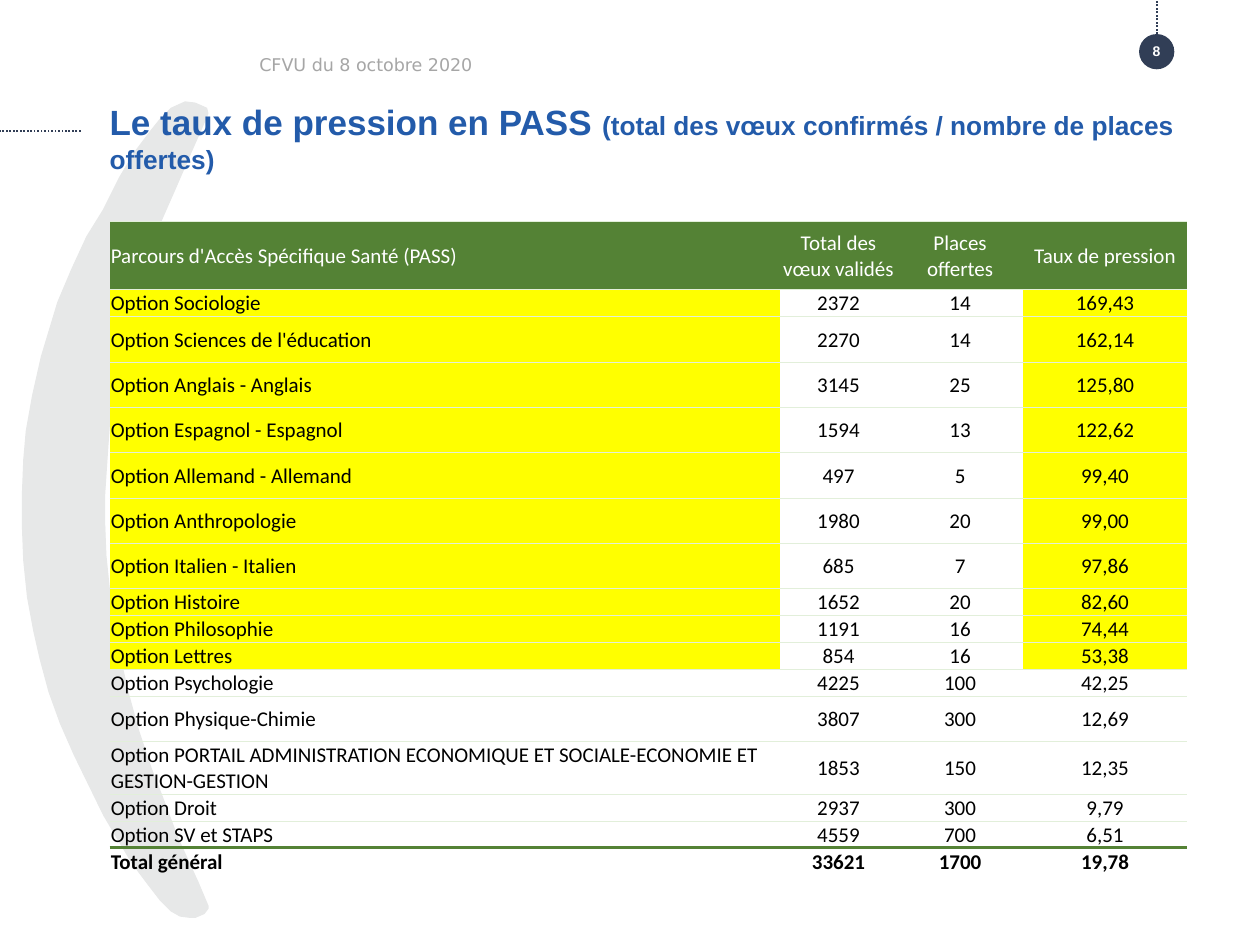
from dataclasses import dataclass
from pptx import Presentation
from pptx.dml.color import RGBColor
from pptx.enum.dml import MSO_LINE
from pptx.enum.shapes import MSO_CONNECTOR, MSO_SHAPE
from pptx.enum.text import MSO_ANCHOR, MSO_AUTO_SIZE, PP_ALIGN
from pptx.oxml import parse_xml
from pptx.oxml.ns import nsdecls
from pptx.util import Pt

DOT = MSO_LINE.ROUND_DOT
LINE = MSO_CONNECTOR.STRAIGHT
OVAL = MSO_SHAPE.OVAL
TOP, MID = MSO_ANCHOR.TOP, MSO_ANCHOR.MIDDLE
FIXED = MSO_AUTO_SIZE.NONE
LEFT, MIDDLE = PP_ALIGN.LEFT, PP_ALIGN.CENTER
PX = 9144
PLAIN = "{2D5ABB26-0587-4C30-8999-92F81FD0307C}"


@dataclass(frozen=True)
class Theme:
    """Colours, fonts and type sizes of the slide."""
    navy: str = "313E56"
    blue: str = "235BAA"
    green: str = "548235"
    pale: str = "E2EFDA"
    yellow: str = "FFFF00"
    white: str = "FFFFFF"
    black: str = "000000"
    grey: str = "A6A6A6"
    moon: str = "E7E8E8"
    sans: str = "Arial"
    body: str = "Calibri"
    note: str = "DejaVu Sans"
    head: int = 20
    sub: int = 15
    cell: int = 12
    foot: int = 10
    page: int = 8


THEME = Theme()

UPPER = [
    (147, 9), (146, 5), (137, 1), (129, 0), (118, 5), (109, 14), (101, 24),
    (89, 40), (77, 60), (64, 86), (51, 107), (39, 133), (28, 159), (15, 202),
    (8, 233), (3, 261), (1, 284), (0, 309), (0, 339), (1, 364), (4, 393),
    (9, 420), (14, 442), (21, 468), (30, 493), (41, 518), (60, 557),
    (65, 567), (65, 312), (67, 282), (69, 253), (75, 219), (80, 192),
    (93, 144), (101, 116), (110, 94), (121, 69), (134, 39), (142, 21),
]
LOWER = [
    (147, 638), (139, 619), (123, 584), (111, 552), (102, 529), (92, 499),
    (84, 470), (78, 444), (72, 411), (69, 389), (66, 360), (65, 336),
    (65, 567), (75, 584), (87, 604), (99, 620), (109, 633), (118, 642),
    (125, 646), (133, 647), (137, 647), (144, 644), (147, 640),
]

HEADS = ["Parcours d'Accès Spécifique Santé (PASS)", "Total des vœux validés",
         "Places offertes", "Taux de pression"]
ROWS = [
    ("Option Sociologie", "2372", "14", "169,43"),
    ("Option Sciences de l'éducation", "2270", "14", "162,14"),
    ("Option Anglais - Anglais", "3145", "25", "125,80"),
    ("Option Espagnol - Espagnol", "1594", "13", "122,62"),
    ("Option Allemand - Allemand", "497", "5", "99,40"),
    ("Option Anthropologie", "1980", "20", "99,00"),
    ("Option Italien - Italien", "685", "7", "97,86"),
    ("Option Histoire", "1652", "20", "82,60"),
    ("Option Philosophie", "1191", "16", "74,44"),
    ("Option Lettres", "854", "16", "53,38"),
    ("Option Psychologie", "4225", "100", "42,25"),
    ("Option Physique-Chimie", "3807", "300", "12,69"),
    ("Option PORTAIL ADMINISTRATION ECONOMIQUE ET SOCIALE-ECONOMIE ET "
     "GESTION-GESTION", "1853", "150", "12,35"),
    ("Option Droit", "2937", "300", "9,79"),
    ("Option SV et STAPS", "4559", "700", "6,51"),
    ("Total général", "33621", "1700", "19,78"),
]
TALL = {2, 3, 4, 5, 6, 7, 12, 13}
HOT = 10
COLS = [532, 93, 100, 130]


def emu(*sizes):
    """Turn px lengths into EMU."""
    return [size * PX for size in sizes]


def style(run, face, size, tint, bold=False):
    """Format one run."""
    font = run.font
    font.name, font.size, font.bold = face, Pt(size), bold
    font.color.rgb = RGBColor.from_string(tint)


def paint(shape, tint, edge=None):
    """Fill a shape and draw or drop its outline."""
    shape.shadow.inherit = False
    shape.fill.solid()
    shape.fill.fore_color.rgb = RGBColor.from_string(tint)
    if edge:
        shape.line.color.rgb = RGBColor.from_string(tint)
        shape.line.width = Pt(edge)
    else:
        shape.line.fill.background()


def label(slide, box, text, align, *look):
    """Place a line of text in a box."""
    frame = slide.shapes.add_textbox(*emu(*box)).text_frame
    frame.word_wrap, frame.vertical_anchor = True, MID
    frame.text = text
    frame.paragraphs[0].alignment = align
    style(frame.paragraphs[0].runs[0], *look)


def dotted(slide, *ends):
    """Draw a dotted rule between two points."""
    rule = slide.shapes.add_connector(LINE, *emu(*ends))
    rule.line.color.rgb = RGBColor.from_string(THEME.navy)
    rule.line.width, rule.line.dash_style = Pt(1), DOT
    rule._element.spPr.append(parse_xml(f"<a:effectLst {nsdecls('a')}/>"))


def crescent(slide, left, top):
    """Draw the two halves of the crescent."""
    for half in (UPPER, LOWER):
        pen = slide.shapes.build_freeform(*half[0], scale=PX)
        pen.add_line_segments(half[1:], close=True)
        paint(pen.convert_to_shape(*emu(left, top)), THEME.moon, 0.75)


def badge(slide, left, top, side):
    """Draw the page number disc and its rule."""
    mid = left + side // 2
    paint(slide.shapes.add_shape(OVAL, *emu(left, top, side, side)), THEME.navy)
    dotted(slide, mid, top, mid, 0)
    label(slide, (mid - 25, top + 6, 50, 15), "8", MIDDLE,
          THEME.sans, THEME.page, THEME.white, True)


def heading(slide, *box):
    """Place the title above the crescent, with the rule before it."""
    title = slide.shapes.title
    slide.shapes._spTree.append(title._element)
    title.left, title.top, title.width, title.height = emu(*box)
    frame = title.text_frame
    frame.margin_left = frame.margin_right = 0
    frame.margin_top = frame.margin_bottom = 0
    frame.word_wrap, frame.auto_size = True, FIXED
    frame.vertical_anchor = TOP
    para = frame.paragraphs[0]
    para.alignment = LEFT
    for text, size in (
            ("Le taux de pression en PASS ", THEME.head),
            ("(total des vœux confirmés / nombre de places offertes)", THEME.sub)):
        run = para.add_run()
        run.text = text
        style(run, THEME.sans, size, THEME.blue, True)
    dotted(slide, box[0] - 23, box[1] + 24, 0, box[1] + 24)


def border(cell, side, tint, width):
    """Add a rule to one side of a cell."""
    cell._tc.get_or_add_tcPr().append(parse_xml(
        f'<a:ln{side} {nsdecls("a")} w="{Pt(width)}"><a:solidFill>'
        f'<a:srgbClr val="{tint}"/></a:solidFill></a:ln{side}>'))


def shade(row, col):
    """Give the fill of a cell, if any."""
    if row == 0:
        return THEME.green
    if row > HOT:
        return None
    return THEME.yellow if col in (0, 3) else THEME.white


def grid(slide, left, top):
    """Build the table of options."""
    data = [HEADS, *ROWS]
    last = len(data) - 1
    tall = [54] + [36 if row in TALL else 19 for row in range(1, last + 1)]
    frame = slide.shapes.add_table(
        len(data), len(COLS), *emu(left, top, sum(COLS), sum(tall)))
    table = frame.table
    table.first_row = table.horz_banding = False
    table._tbl.tblPr[0].text = PLAIN
    for col, wide in zip(table.columns, COLS):
        col.width = wide * PX
    for row, texts in enumerate(data):
        table.rows[row].height = tall[row] * PX
        for col, text in enumerate(texts):
            cell = table.cell(row, col)
            cell.margin_left = cell.margin_right = cell.margin_top = PX
            cell.margin_bottom, cell.vertical_anchor = 0, MID
            thick, thin = (THEME.green, 2), (THEME.pale, 0.5)
            border(cell, "T", *(thick if row == last else thin))
            if row < last:
                border(cell, "B", *(thick if row == last - 1 else thin))
            tint = shade(row, col)
            if tint:
                cell.fill.solid()
                cell.fill.fore_color.rgb = RGBColor.from_string(tint)
            else:
                cell.fill.background()
            cell.text_frame.text = text
            para = cell.text_frame.paragraphs[0]
            para.alignment = MIDDLE if col else LEFT
            style(para.runs[0], THEME.body, THEME.cell,
                  THEME.black if row else THEME.white, row == last)


def main():
    """Build and save the slide."""
    deck = Presentation()
    deck.slide_width, deck.slide_height = emu(1000, 750)
    slide = deck.slides.add_slide(deck.slide_layouts[5])
    crescent(slide, 18, 81)
    badge(slide, 904, 27, 28)
    heading(slide, 87, 80, 900, 70)
    grid(slide, 87, 176)
    label(slide, (196, 29, 662, 44), "CFVU du 8 octobre 2020", LEFT,
          THEME.note, THEME.foot, THEME.grey)
    deck.save("out.pptx")


if __name__ == "__main__":
    main()
